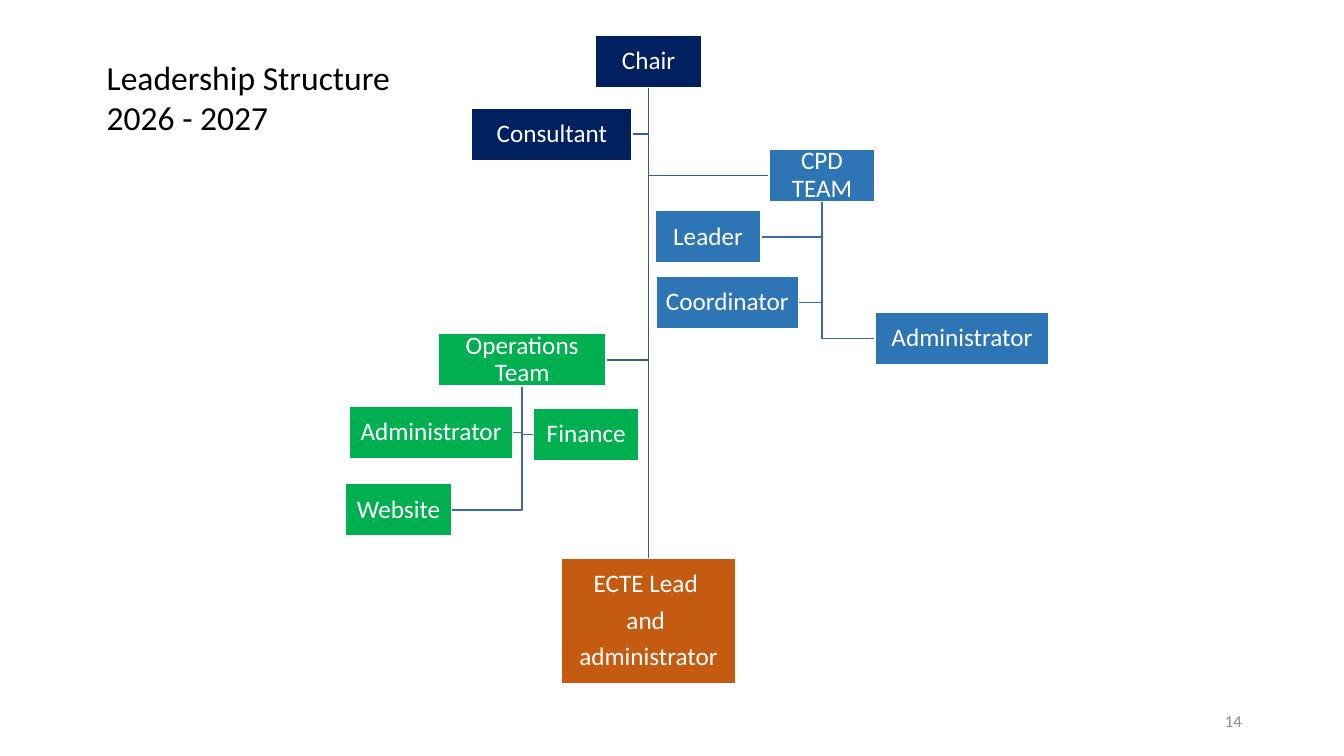
from pptx import Presentation
from pptx.dml.color import RGBColor
from pptx.enum.shapes import MSO_CONNECTOR as LINE, MSO_SHAPE as SHAPE
from pptx.enum.text import MSO_ANCHOR as ANCHOR, PP_ALIGN as ALIGN
from pptx.oxml.ns import qn
from pptx.util import Cm, Pt
from lxml.etree import SubElement

# Content: key -> (lines, colour, left, top, width, height) in cm
ROW = 1.32
ROLES = {
    "chair": (["Chair"], "navy", 15.01, 0.89, 2.67, ROW),
    "ecte": (["ECTE Lead ", "and ", "administrator"], "orange", 14.15, 14.07, 4.39, 3.15),
    "consultant": (["Consultant"], "navy", 11.89, 2.72, 4.04, ROW),
    "cpd": (["CPD TEAM"], "blue", 19.38, 3.76, 2.67, ROW),
    "cpd leader": (["Leader"], "blue", 16.51, 5.31, 2.67, ROW),
    "cpd admin": (["Administrator"], "blue", 22.05, 7.87, 4.39, ROW),
    "cpd coordinator": (["Coordinator"], "blue", 16.54, 6.96, 3.58, ROW),
    "operations": (["Operations Team"], "green", 11.05, 8.41, 4.22, ROW),
    "ops admin": (["Administrator"], "green", 8.81, 10.24, 4.11, ROW),
    "finance": (["Finance"], "green", 13.44, 10.29, 2.67, ROW),
    "website": (["Website"], "green", 8.71, 12.19, 2.67, ROW),
}
# Parent -> (branch colour, children reached by an elbow)
BRANCHES = {
    "operations": ("team_line", ["website", "finance", "ops admin"]),
    "cpd": ("team_line", ["cpd coordinator", "cpd admin", "cpd leader"]),
    "chair": ("chair_line", ["operations", "cpd", "consultant"]),
}
TITLE = ["Leadership Structure", "2026 - 2027"]
PAGE = ["14"]

THEME = {
    "font": "Calibri", "title_size": 24, "role_size": 18, "page_size": 12,
    "navy": "002060", "orange": "C55A11", "blue": "2E75B6", "green": "00B050",
    "team_line": "3E67B2", "chair_line": "365B9D",
    "white": "FFFFFF", "black": "000000", "grey": "8C8C8C",
}


def colour(name):
    return RGBColor.from_string(THEME[name])


def write(frame, lines, size, ink, align=ALIGN.LEFT, anchor=ANCHOR.TOP,
          inset=None, spacing=1.0, after=0):
    frame.word_wrap = True
    frame.vertical_anchor = anchor
    if inset is not None:
        frame.margin_left = frame.margin_right = Cm(inset)
        frame.margin_top = frame.margin_bottom = Cm(inset)
    for i, line in enumerate(lines):
        para = frame.paragraphs[0] if i == 0 else frame.add_paragraph()
        para.alignment = align
        para.line_spacing = spacing
        para.space_after = Pt(after)
        run = para.add_run()
        run.text = line
        run.font.name = THEME["font"]
        run.font.size = Pt(THEME[size])
        run.font.color.rgb = colour(ink)


def style_line(line, name):
    line.color.rgb = colour(name)
    line.width = Pt(1)


def draw_elbow(shapes, parent, child, line_colour):
    """Drop from the parent's bottom centre, then turn to the child's near side."""
    _, _, left, top, width, height = ROLES[parent]
    _, _, child_left, child_top, child_width, child_height = ROLES[child]
    x, y = left + width / 2, top + height
    end_x = child_left if child_left > x else child_left + child_width
    end_y = child_top + child_height / 2
    builder = shapes.build_freeform(Cm(x), Cm(y))
    builder.add_line_segments([(Cm(x), Cm(end_y)), (Cm(end_x), Cm(end_y))], close=False)
    elbow = builder.convert_to_shape()
    elbow.fill.background()
    elbow.shadow.inherit = False
    style_line(elbow.line, line_colour)


def draw_role(shapes, lines, fill, left, top, width, height):
    box = shapes.add_shape(SHAPE.RECTANGLE, Cm(left), Cm(top), Cm(width), Cm(height))
    box.shadow.inherit = False
    box.fill.solid()
    box.fill.fore_color.rgb = colour(fill)
    style_line(box.line, "white")
    write(box.text_frame, lines, "role_size", "white", align=ALIGN.CENTER,
          anchor=ANCHOR.MIDDLE, inset=0.03, spacing=0.9, after=6.3)
    return box


def main():
    deck = Presentation()
    deck.slide_width, deck.slide_height = Cm(33.87), Cm(19.05)
    shapes = deck.slides.add_slide(deck.slide_layouts[6]).shapes

    # Page number
    page = shapes.add_textbox(Cm(23.93), Cm(17.65), Cm(7.62), Cm(1.02))
    write(page.text_frame, PAGE, "page_size", "grey", align=ALIGN.RIGHT, anchor=ANCHOR.MIDDLE)

    # Branches, behind the boxes
    for parent, (line_colour, children) in BRANCHES.items():
        for child in children:
            draw_elbow(shapes, parent, child, line_colour)
    trunk = shapes.add_connector(LINE.STRAIGHT, 0, 0, 0, 0)
    style_line(trunk.line, "chair_line")
    SubElement(trunk._element.spPr, qn("a:effectLst"))

    # Boxes, then the trunk from chair to lead
    boxes = {key: draw_role(shapes, *role) for key, role in ROLES.items()}
    trunk.begin_connect(boxes["chair"], 2)
    trunk.end_connect(boxes["ecte"], 0)

    # Title
    title = shapes.add_textbox(Cm(2.44), Cm(1.3), Cm(8.97), Cm(2.31))
    write(title.text_frame, TITLE, "title_size", "black")

    deck.save("out.pptx")


if __name__ == "__main__":
    main()
